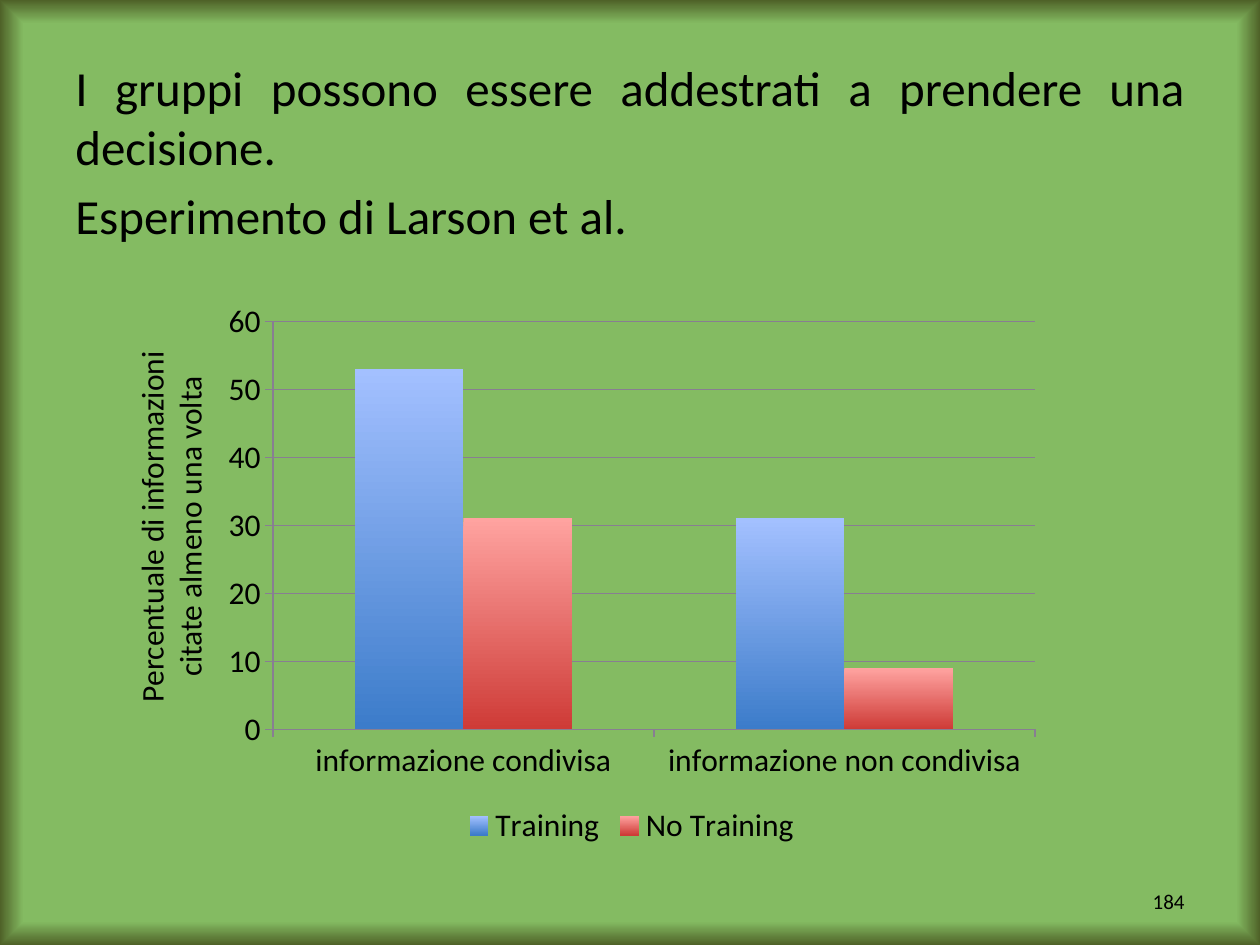
from dataclasses import dataclass

from lxml import etree
from pptx import Presentation
from pptx.chart.data import CategoryChartData
from pptx.dml.color import RGBColor as RGB
from pptx.enum.chart import XL_CHART_TYPE as ChartType
from pptx.enum.chart import XL_LEGEND_POSITION as LegendPos
from pptx.enum.chart import XL_TICK_MARK as Tick
from pptx.enum.text import MSO_ANCHOR as Anchor
from pptx.enum.text import PP_ALIGN as Align
from pptx.oxml.ns import qn
from pptx.util import Pt


@dataclass(frozen=True)
class Theme:
    font: str = "Calibri"
    text: str = "000000"
    back: str = "84BB62"
    edge: str = "4F6228"
    rule: str = "887E92"
    body_size: float = 28
    chart_size: float = 18
    number_size: float = 12


@dataclass(frozen=True)
class TextBox:
    lines: tuple[str, ...]
    left: float
    top: float
    width: float
    height: float
    size: float
    align: Align
    anchor: Anchor = Anchor.TOP
    space_before: float = 0
    vert: str = "horz"


@dataclass(frozen=True)
class Series:
    name: str
    values: tuple[float, ...]
    light: str
    dark: str


THEME = Theme()

TEXTS = (
    TextBox(("I gruppi possono essere addestrati a prendere una decisione.",
             "Esperimento di Larson et al."),
            36, 29.5, 648, 136, THEME.body_size, Align.JUSTIFY, space_before=5.6),
    TextBox(("184",), 516, 500.5, 168, 28.8, THEME.number_size, Align.RIGHT, Anchor.MIDDLE),
    TextBox(("Percentuale di informazioni citate almeno una volta",),
            72, 180, 58.3, 242, THEME.chart_size, Align.CENTER, vert="vert270"),
)

CATEGORIES = ("informazione condivisa", "informazione non condivisa")
SERIES = (
    Series("Training", (53, 31), "A3C0FF", "3C7CCA"),
    Series("No Training", (31, 9), "FFA3A0", "CE3B37"),
)


def rgb(code: str) -> RGB:
    return RGB.from_string(code)


def set_gradient(fill, colors: tuple[str, str], positions: tuple[float, float] = (0, 1)) -> None:
    fill.gradient()
    for stop, color, position in zip(fill.gradient_stops, colors, positions):
        stop.color.rgb = rgb(color)
        stop.position = position


def paint_background(slide) -> None:
    """Fill the slide with a flat centre that darkens at the edges."""
    set_gradient(slide.background.fill, (THEME.back, THEME.edge), (0.95, 1))
    grad = slide.background._cSld.find(".//" + qn("a:gradFill"))
    lin = grad.find(qn("a:lin"))
    path = etree.Element(qn("a:path"), {"path": "shape"})
    etree.SubElement(path, qn("a:fillToRect"), {side: "50000" for side in "ltrb"})
    grad.replace(lin, path)


def add_text(slide, box: TextBox) -> None:
    s = slide.shapes.add_textbox(Pt(box.left), Pt(box.top), Pt(box.width), Pt(box.height))
    tf = s.text_frame
    tf.word_wrap = True
    tf.vertical_anchor = box.anchor
    tf._txBody.bodyPr.set("vert", box.vert)
    tf.text = "\n".join(box.lines)
    for p in tf.paragraphs:
        p.alignment = box.align
        p.space_before = Pt(box.space_before)
        for r in p.runs:
            r.font.name = THEME.font
            r.font.size = Pt(box.size)
            r.font.color.rgb = rgb(THEME.text)


def add_column_chart(slide) -> None:
    data = CategoryChartData()
    data.categories = CATEGORIES
    for series in SERIES:
        data.add_series(series.name, series.values)
    chart = slide.shapes.add_chart(ChartType.COLUMN_CLUSTERED, Pt(121), Pt(166.3),
                                   Pt(480), Pt(320), data).chart
    chart.has_title = False
    chart.font.name = THEME.font
    chart.font.size = Pt(THEME.chart_size)
    chart.font.color.rgb = rgb(THEME.text)

    # Legend
    chart.has_legend = True
    chart.legend.position = LegendPos.BOTTOM
    chart.legend.include_in_layout = False

    # Axes and gridlines
    value_axis = chart.value_axis
    value_axis.minimum_scale, value_axis.maximum_scale, value_axis.major_unit = 0, 60, 10
    value_axis.has_major_gridlines = True
    lines = [value_axis.major_gridlines.format.line]
    for axis in (chart.category_axis, value_axis):
        axis.major_tick_mark = Tick.OUTSIDE
        lines.append(axis.format.line)
    for line in lines:
        line.color.rgb = rgb(THEME.rule)
        line.width = Pt(0.75)

    # Columns, light at the top
    plot = chart.plots[0]
    plot.vary_by_categories = False
    plot.gap_width = 150
    plot.overlap = 0
    for column, series in zip(plot.series, SERIES):
        fill = column.format.fill
        set_gradient(fill, (series.light, series.dark))
        fill.gradient_angle = 270


def main() -> None:
    prs = Presentation()
    prs.slide_width, prs.slide_height = Pt(720), Pt(540)
    slide = prs.slides.add_slide(prs.slide_layouts[6])
    paint_background(slide)
    add_column_chart(slide)
    for box in TEXTS:
        add_text(slide, box)
    prs.save("out.pptx")


if __name__ == "__main__":
    main()
